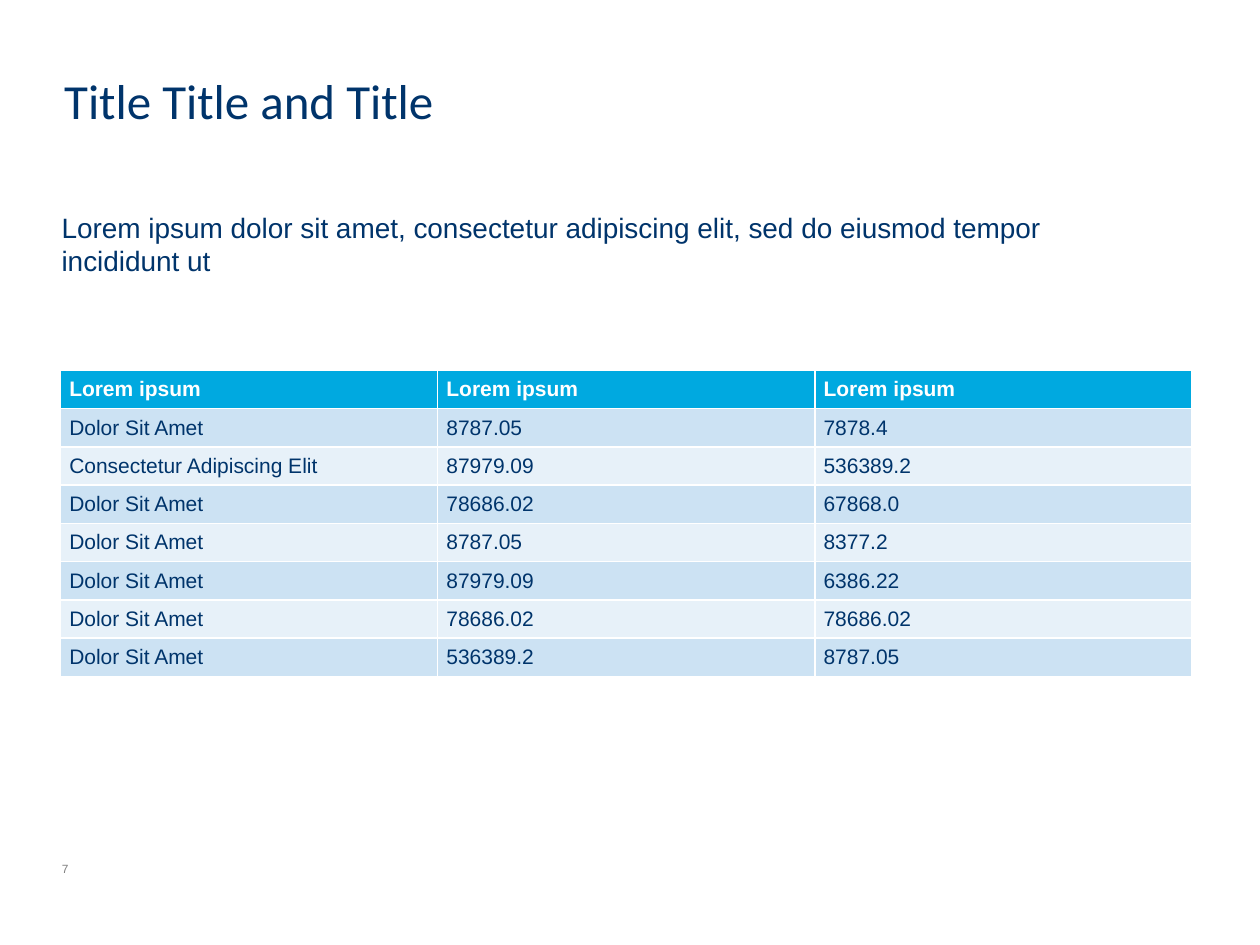
from pptx import Presentation
from pptx import util as u
from pptx.dml.color import RGBColor
from pptx.enum import text

COLORS = {
    "navy": "00346B",
    "header": "00A9E0",
    "odd": "CCE2F3",
    "even": "E7F1F9",
    "white": "FFFFFF",
    "gray": "808080",
}
ROWS = [
    ["Lorem ipsum", "Lorem ipsum", "Lorem ipsum"],
    ["Dolor Sit Amet", "8787.05", "7878.4"],
    ["Consectetur Adipiscing Elit", "87979.09", "536389.2"],
    ["Dolor Sit Amet", "78686.02", "67868.0"],
    ["Dolor Sit Amet", "8787.05", "8377.2"],
    ["Dolor Sit Amet", "87979.09", "6386.22"],
    ["Dolor Sit Amet", "78686.02", "78686.02"],
    ["Dolor Sit Amet", "536389.2", "8787.05"],
]


def inches(*lengths):
    """Convert several lengths to inches."""
    return [u.Inches(length) for length in lengths]


def style_paragraph(para, size, color, font="Arial", bold=False):
    """Set the font of a whole paragraph."""
    para.font.name = font
    para.font.size = u.Pt(size)
    para.font.bold = bold
    para.font.color.rgb = RGBColor.from_string(COLORS[color])


def add_text(page, box, words, size, color, font="Arial",
             anchor=text.MSO_ANCHOR.MIDDLE, margins=(0, 0)):
    """Place one wrapped paragraph in a text box."""
    frame = page.shapes.add_textbox(*inches(*box)).text_frame
    frame.word_wrap = True
    frame.vertical_anchor = anchor
    frame.margin_left = frame.margin_right = u.Inches(margins[0])
    frame.margin_top = frame.margin_bottom = u.Inches(margins[1])
    frame.text = words
    style_paragraph(frame.paragraphs[0], size, color, font)


def add_data_table(page, box, rows):
    """Fill the box with a banded table under a coloured header row."""
    frame = page.shapes.add_table(len(rows), len(rows[0]), *inches(*box))
    for row_index, row in enumerate(rows):
        is_header = row_index == 0
        fill = "header" if is_header else "odd" if row_index % 2 else "even"
        for column_index, words in enumerate(row):
            cell = frame.table.cell(row_index, column_index)
            cell.fill.solid()
            cell.fill.fore_color.rgb = RGBColor.from_string(COLORS[fill])
            cell.vertical_anchor = text.MSO_ANCHOR.MIDDLE
            cell.margin_left = cell.margin_right = u.Inches(0.07)
            cell.margin_top = cell.margin_bottom = u.Inches(0.04)
            cell.text = words
            style_paragraph(cell.text_frame.paragraphs[0], 12,
                            "white" if is_header else "navy", bold=is_header)


def main():
    """Build the slide and save the deck."""
    deck = Presentation()
    deck.slide_width, deck.slide_height = inches(10, 7.5)
    page = deck.slides.add_slide(deck.slide_layouts[6])
    add_text(page, (0.51, 0.51, 8.94, 0.56), "Title Title and Title",
             28, "navy", font="Calibri")
    add_text(page, (0.49, 6.78, 2.25, 0.23), "7", 6.8, "gray")
    add_data_table(page, (0.48, 2.94, 8.98, 2.43), ROWS)
    add_text(page, (0.39, 1.62, 8.55, 0.91),
             "Lorem ipsum dolor sit amet, consectetur adipiscing elit, "
             "sed do eiusmod tempor incididunt ut",
             16, "navy", anchor=text.MSO_ANCHOR.TOP, margins=(0.1, 0.05))
    deck.save("out.pptx")


if __name__ == "__main__":
    main()
